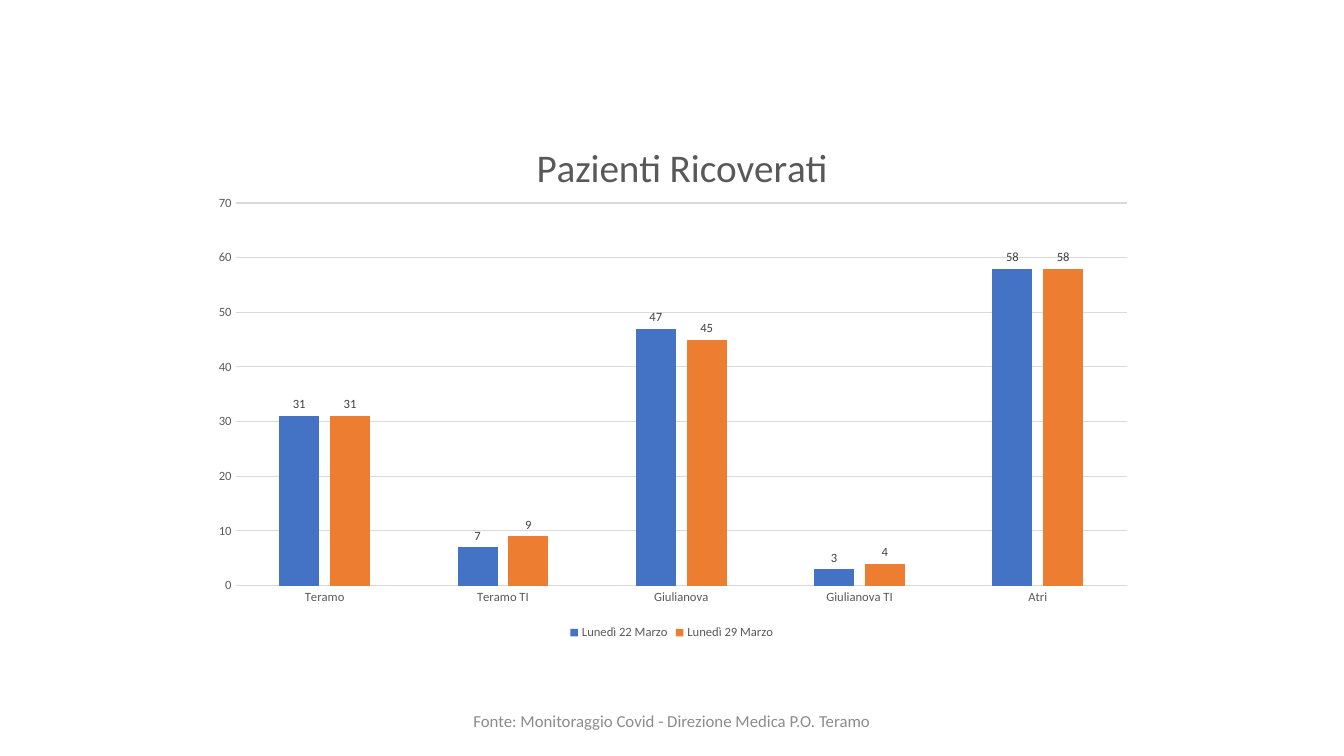
from dataclasses import dataclass

from lxml.etree import SubElement
from pptx import Presentation
from pptx.chart.chart import Chart
from pptx.chart.data import CategoryChartData
from pptx.dml.color import RGBColor
from pptx.enum.chart import XL_CHART_TYPE, XL_LABEL_POSITION, XL_LEGEND_POSITION, XL_TICK_MARK
from pptx.enum.text import MSO_ANCHOR, PP_ALIGN
from pptx.oxml.ns import qn
from pptx.slide import Slide
from pptx.text.text import Font
from pptx.util import Cm, Pt

FONT_NAME = "Calibri"
COLORS = {
    "background": "FFFFFF",
    "first_week": "4472C4",
    "second_week": "ED7D31",
    "text": "595959",
    "label": "404040",
    "line": "D9D9D9",
    "footer": "8C8C8C",
}
HOSPITALS = ["Teramo", "Teramo TI", "Giulianova", "Giulianova TI", "Atri"]


@dataclass
class Week:
    name: str
    patients: tuple[int, ...]
    color: str


WEEKS = [
    Week("Lunedì 22 Marzo", (31, 7, 47, 3, 58), "first_week"),
    Week("Lunedì 29 Marzo", (31, 9, 45, 4, 58), "second_week"),
]


def rgb(color: str) -> RGBColor:
    return RGBColor.from_string(COLORS[color])


def style_font(font: Font, size: float, color: str) -> None:
    font.name = FONT_NAME
    font.size = Pt(size)
    font.bold = False
    font.color.rgb = rgb(color)


def set_layout(layout, **fractions: float) -> None:
    """Fix the place of a chart part, in fractions of the chart's size."""
    for child in list(layout):
        layout.remove(child)
    manual = SubElement(layout, qn("c:manualLayout"))
    if "w" in fractions:
        SubElement(manual, qn("c:layoutTarget")).set("val", "inner")
    for name in ("x", "y"):
        SubElement(manual, qn(f"c:{name}Mode")).set("val", "edge")
    for name, fraction in fractions.items():
        SubElement(manual, qn(f"c:{name}")).set("val", str(fraction))


def style_title(chart: Chart) -> None:
    chart.has_title = True
    title = chart.chart_title
    title.include_in_layout = False
    paragraph = title.text_frame.paragraphs[0]
    paragraph.text = "Pazienti Ricoverati"
    style_font(paragraph.font, 28, "text")
    set_layout(title.element.get_or_add_layout() if hasattr(title.element, "get_or_add_layout")
               else title.element.find(qn("c:layout")), x=0.35, y=0.04)


def style_axes(chart: Chart) -> None:
    for axis in (chart.category_axis, chart.value_axis):
        axis.major_tick_mark = XL_TICK_MARK.NONE
        axis.minor_tick_mark = XL_TICK_MARK.NONE
        style_font(axis.tick_labels.font, 9, "text")
    chart.value_axis.minimum_scale = 0
    chart.value_axis.maximum_scale = 70
    chart.value_axis.major_unit = 10
    chart.value_axis.format.line.fill.background()
    for line in (chart.category_axis.format.line, chart.value_axis.major_gridlines.format.line):
        line.color.rgb = rgb("line")
        line.width = Pt(0.75)


def style_columns(chart: Chart) -> None:
    plot = chart.plots[0]
    plot.gap_width = 219
    plot.overlap = -27
    plot.vary_by_categories = False
    for week, series in zip(WEEKS, plot.series):
        series.format.fill.solid()
        series.format.fill.fore_color.rgb = rgb(week.color)
        series.invert_if_negative = False
        labels = series.data_labels
        labels.show_value = True
        labels.position = XL_LABEL_POSITION.OUTSIDE_END
        style_font(labels.font, 9, "label")


def add_patient_chart(slide: Slide) -> None:
    data = CategoryChartData()
    data.categories = HOSPITALS
    for week in WEEKS:
        data.add_series(week.name, week.patients)
    chart = slide.shapes.add_chart(
        XL_CHART_TYPE.COLUMN_CLUSTERED, Cm(4.98), Cm(2.84), Cm(23.9), Cm(13.39), data
    ).chart
    style_font(chart.font, 10, "text")
    style_title(chart)
    style_axes(chart)
    style_columns(chart)
    chart.has_legend = True
    chart.legend.position = XL_LEGEND_POSITION.BOTTOM
    chart.legend.include_in_layout = False
    style_font(chart.legend.font, 9, "text")
    plot_area = chart.plots[0]._element.getparent()
    layout = plot_area.find(qn("c:layout"))
    if layout is None:
        layout = SubElement(plot_area, qn("c:layout"))
        plot_area.insert(0, layout)
    set_layout(layout, x=0.04, y=0.17, w=0.94, h=0.72)


def add_footer(slide: Slide) -> None:
    footer = slide.shapes.add_textbox(Cm(11.22), Cm(17.65), Cm(11.43), Cm(1.01))
    frame = footer.text_frame
    frame.word_wrap = True
    frame.vertical_anchor = MSO_ANCHOR.MIDDLE
    paragraph = frame.paragraphs[0]
    paragraph.text = "Fonte: Monitoraggio Covid - Direzione Medica P.O. Teramo"
    paragraph.alignment = PP_ALIGN.CENTER
    style_font(paragraph.font, 12, "footer")


def main() -> None:
    presentation = Presentation()
    presentation.slide_width = Cm(33.87)
    presentation.slide_height = Cm(19.05)
    slide = presentation.slides.add_slide(presentation.slide_layouts[6])
    slide.background.fill.solid()
    slide.background.fill.fore_color.rgb = rgb("background")
    add_patient_chart(slide)
    add_footer(slide)
    presentation.save("out.pptx")


if __name__ == "__main__":
    main()
